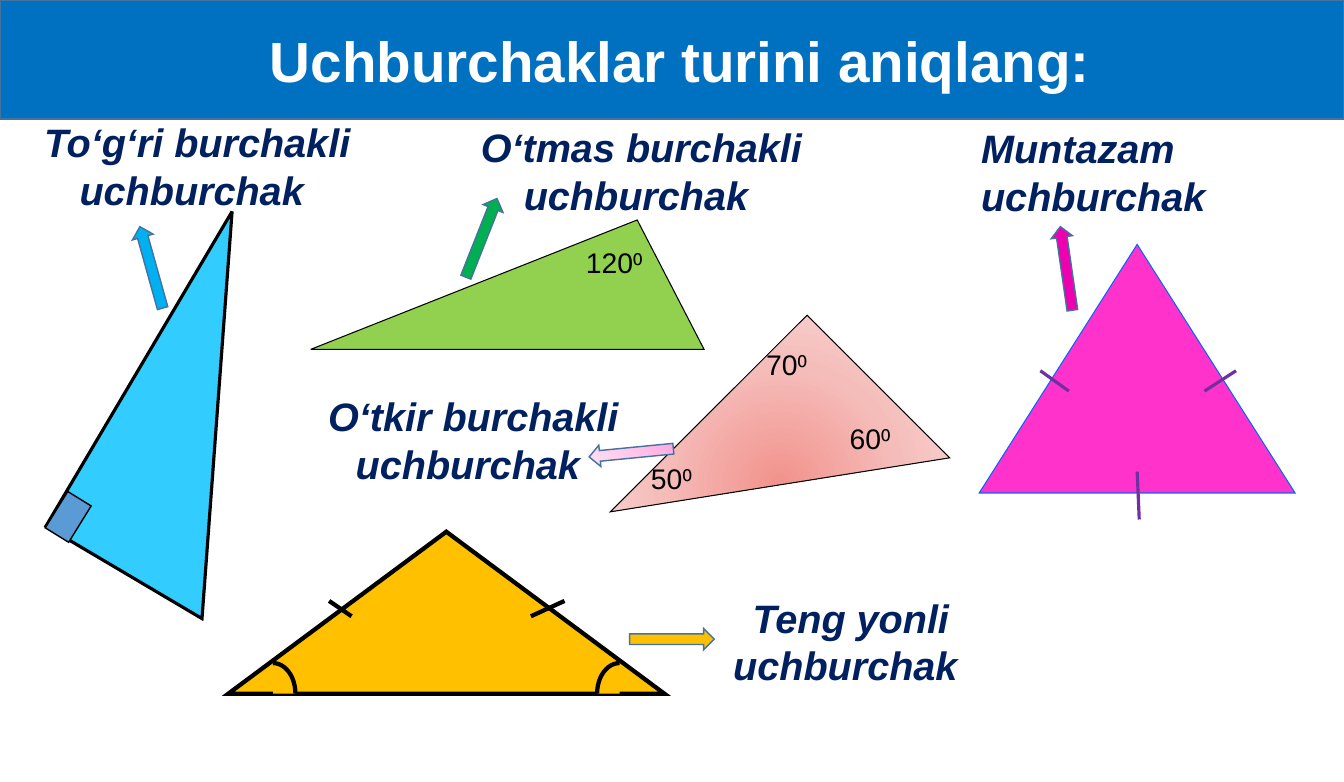
from lxml import etree
from pptx import Presentation
from pptx.dml.color import RGBColor
from pptx.enum.shapes import MSO_CONNECTOR, MSO_SHAPE
from pptx.enum.text import MSO_ANCHOR, MSO_AUTO_SIZE, PP_ALIGN
from pptx.oxml import parse_xml
from pptx.oxml.ns import nsdecls, qn
from pptx.util import Emu, Inches, Pt

STRAIGHT = MSO_CONNECTOR.STRAIGHT
TRIANGLE, RIGHT_TRIANGLE = MSO_SHAPE.ISOSCELES_TRIANGLE, MSO_SHAPE.RIGHT_TRIANGLE
ARROW, ARC, RECTANGLE = MSO_SHAPE.RIGHT_ARROW, MSO_SHAPE.ARC, MSO_SHAPE.RECTANGLE
MIDDLE, TOP = MSO_ANCHOR.MIDDLE, MSO_ANCHOR.TOP
CENTER, LEFT = PP_ALIGN.CENTER, PP_ALIGN.LEFT
NO_AUTOFIT = MSO_AUTO_SIZE.NONE

SLIDE_WIDTH, SLIDE_HEIGHT = Emu(12060238), Emu(7019925)
TITLE_BAR = (0, 0, SLIDE_WIDTH.inches, 1.17)
ARROW_SIZE = (0.83, 0.21)
ARC_RADII = (0.22, 0.3)
COLORS = {
    "white": "FFFFFF", "black": "000000", "navy": "002060", "bar": "0070C0",
    "outline": "43739E", "cyan": "33CCFF", "square": "5B9BD5", "lime": "92D050",
    "pink": "FF33CC", "pink edge": "0066FF", "purple": "7030A0", "amber": "FFC000",
    "sky": "00B0F0", "green": "00B050", "magenta": "EE00B0",
}
RADIAL = ('<a:path path="circle"><a:fillToRect l="50000" t="50000" '
          'r="50000" b="50000"/></a:path>')
GRADIENTS = {
    "rose": (("F2928C", "F5BDBA", "F9DFDE"), RADIAL),
    "blush": (("FFA3DF", "FFC7EA", "FFE4F4"), '<a:lin ang="18900000" scaled="1"/>'),
}
TITLE_FONT = {"name": "Arial", "size": Pt(40), "bold": True}
LABEL_FONT = {"name": "Arial", "size": Pt(28), "bold": True, "italic": True}
ANGLE_FONT = {"name": "Arial", "size": Pt(20)}

# Every part of a figure is placed from the top left corner of its triangle's box
FIGURES = [
    {"box": (6.29, 3.77, 2.73, 1.98), "preset": RIGHT_TRIANGLE, "rotation": 135,
     "fill": "rose", "line": ("black", 0.75),
     "angles": [("50⁰", 0, 0.71), ("70⁰", 1.13, -0.41), ("60⁰", 1.95, 0.32)],
     "label": ("O‘tkir burchakli", -4.94, 0.03, 6.59, CENTER),
     "arrow": (-0.51, 0.57, 174.4, "blush")},
    {"box": (3.05, 2.16, 3.86, 1.27), "preset": TRIANGLE, "apex": 0.83,
     "fill": "lime", "line": ("black", 0.75),
     "angles": [("120⁰", 2.6, 0.2)],
     "label": ("O‘tmas burchakli", 1.11, -1, 4.27, CENTER),
     "arrow": (1.26, 0.07, 291.6, "green")},
    {"box": (1.24, 2.28, 1.78, 3.59), "preset": RIGHT_TRIANGLE, "rotation": 30.6,
     "fill": "cyan", "line": ("black", 2.25),
     "square": (-0.78, 2.66, 0.42, 0.27, 301.7),
     "label": ("To‘g‘ri burchakli", -1.18, -1.17, 3.75, CENTER),
     "arrow": (-0.17, 0.24, 254.4, "sky")},
    {"box": (9.61, 2.4, 3.1, 2.44), "preset": TRIANGLE,
     "fill": "pink", "line": ("pink edge", 0.75),
     "ticks": [(0.6, 1.24, 0.88, 1.44), (1.55, 2.23, 1.57, 2.7),
               (2.21, 1.44, 2.52, 1.24)],
     "tick line": ("purple", 2.25),
     "label": ("Muntazam", -0.08, -1.23, 2.54, LEFT),
     "arrow": (0.44, 0.13, 261.8, "magenta")},
    {"box": (2.24, 5.22, 4.28, 1.59), "preset": TRIANGLE,
     "fill": "amber", "line": ("black", 3),
     "ticks": [(0.99, 0.68, 1.21, 0.83), (2.97, 0.83, 3.3, 0.68)],
     "tick line": ("black", 3),
     "arcs": [(0.44, 1.59, 162, 0), (3.84, 1.59, 108, 162)],
     "label": ("Teng yonli", 4.38, 0.56, 3.46, CENTER),
     "arrow": (3.94, 0.95, 0, "amber")},
]


def rgb(name):
    return RGBColor.from_string(COLORS[name])


def set_line(line, style):
    color, width = style
    line.color.rgb = rgb(color)
    line.width = Pt(width)
    etree.SubElement(line._ln, qn("a:miter"), lim="800000")


def set_fill(shape, name):
    if name not in GRADIENTS:
        shape.fill.solid()
        shape.fill.fore_color.rgb = rgb(name)
        return
    colors, direction = GRADIENTS[name]
    stops = "".join(f'<a:gs pos="{index * 50000}"><a:srgbClr val="{color}"/></a:gs>'
                    for index, color in enumerate(colors))
    gradient = parse_xml(f'<a:gradFill {nsdecls("a")} rotWithShape="1">'
                         f'<a:gsLst>{stops}</a:gsLst>{direction}</a:gradFill>')
    shape._element.spPr.find(qn("a:prstGeom")).addnext(gradient)


def add_preset(slide, preset, box, fill, line, rotation=0):
    shape = slide.shapes.add_shape(preset, *map(Inches, box))
    shape.shadow.inherit = False
    shape.rotation = rotation
    set_fill(shape, fill)
    set_line(shape.line, line)
    return shape


def write_text(shape, lines, font, color, alignment, anchor=TOP, wrap=True):
    frame = shape.text_frame
    frame.text = "\n".join(lines)
    for name, value in {"word_wrap": wrap, "auto_size": NO_AUTOFIT,
                        "vertical_anchor": anchor}.items():
        setattr(frame, name, value)
    for paragraph in frame.paragraphs:
        paragraph.alignment = alignment
        run_font = paragraph.runs[0].font
        run_font.color.rgb = rgb(color)
        for name, value in font.items():
            setattr(run_font, name, value)


def add_tick(slide, start, end, line):
    tick = slide.shapes.add_connector(STRAIGHT, *map(Inches, (*start, *end)))
    set_line(tick.line, line)
    etree.SubElement(tick._element.spPr, qn("a:effectLst"))


def draw_title(slide, box):
    title = slide.shapes.title
    title.left, title.top, title.width, title.height = map(Inches, box)
    set_fill(title, "bar")
    set_line(title.line, ("outline", 1))
    write_text(title, [" Uchburchaklar turini aniqlang:"], TITLE_FONT, "white",
               CENTER, MIDDLE)


def draw_figure(slide, box, figure):
    left, top = box[:2]

    def place(x, y):
        return left + x, top + y

    # Triangle
    triangle = add_preset(slide, figure["preset"], box, figure["fill"],
                          figure["line"], figure.get("rotation", 0))
    if "apex" in figure:
        triangle.adjustments[0] = figure["apex"]

    # Marks for equal sides, equal angles and the right angle
    for x1, y1, x2, y2 in figure.get("ticks", []):
        add_tick(slide, place(x1, y1), place(x2, y2), figure["tick line"])
    radius_x, radius_y = ARC_RADII
    for x, y, start, end in figure.get("arcs", []):
        arc_box = (*place(x - radius_x, y - radius_y), 2 * radius_x, 2 * radius_y)
        arc = add_preset(slide, ARC, arc_box, figure["fill"], figure["line"])
        arc.adjustments[0], arc.adjustments[1] = start, end
    if "square" in figure:
        x, y, width, height, rotation = figure["square"]
        add_preset(slide, RECTANGLE, (*place(x, y), width, height), "square",
                   ("black", 1), rotation)

    # Angle sizes
    for text, x, y in figure.get("angles", []):
        angle_box = (*place(x, y), 0.19 + 0.14 * len(text), 0.44)
        angle = slide.shapes.add_textbox(*map(Inches, angle_box))
        write_text(angle, [text], ANGLE_FONT, "black", LEFT, wrap=False)

    # Name of the type and the arrow to it
    name, x, y, width, alignment = figure["label"]
    label = slide.shapes.add_textbox(*map(Inches, (*place(x, y), width, 1.04)))
    write_text(label, [name, "uchburchak "], LABEL_FONT, "navy", alignment)
    x, y, rotation, color = figure["arrow"]
    add_preset(slide, ARROW, (*place(x, y), *ARROW_SIZE), color, ("outline", 1), rotation)


def main():
    presentation = Presentation()
    presentation.slide_width = SLIDE_WIDTH
    presentation.slide_height = SLIDE_HEIGHT
    slide = presentation.slides.add_slide(presentation.slide_layouts[5])
    draw_title(slide, TITLE_BAR)
    for figure in FIGURES:
        draw_figure(slide, figure["box"], figure)
    presentation.save("out.pptx")


if __name__ == "__main__":
    main()
